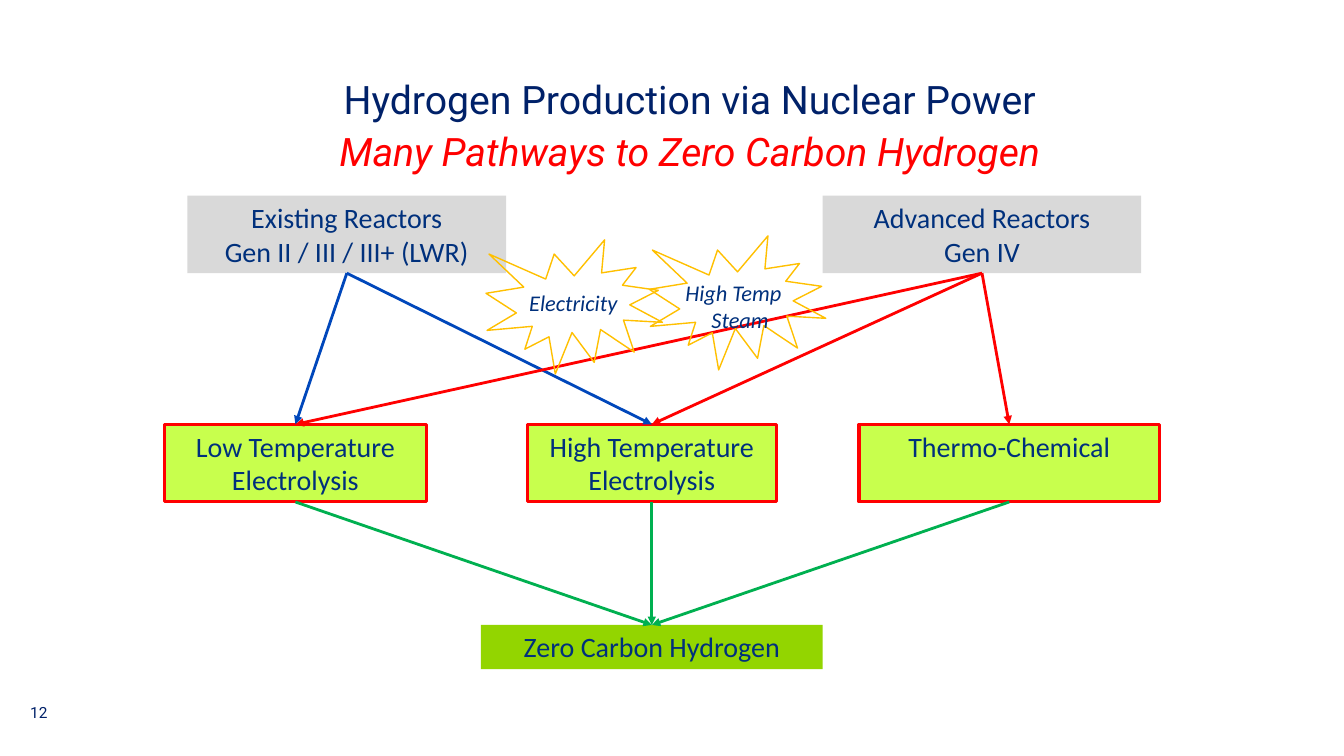
from dataclasses import dataclass

from lxml.etree import SubElement
from pptx import Presentation
from pptx.dml.color import RGBColor
from pptx.enum.shapes import MSO_CONNECTOR, MSO_SHAPE
from pptx.enum.text import MSO_ANCHOR, PP_ALIGN
from pptx.oxml.ns import qn
from pptx.shapes.autoshape import Shape
from pptx.slide import Slide
from pptx.text.text import Font
from pptx.util import Inches, Pt

NAVY = RGBColor(0x00, 0x21, 0x69)
TEXT_BLUE = RGBColor(0x00, 0x30, 0x7C)
ARROW_BLUE = RGBColor(0x00, 0x47, 0xBB)
RED = RGBColor(0xFF, 0x00, 0x00)
ARROW_GREEN = RGBColor(0x00, 0xB0, 0x50)
LIME = RGBColor(0xC8, 0xFF, 0x4D)
LEAF = RGBColor(0x93, 0xD5, 0x00)
GREY = RGBColor(0xD9, 0xD9, 0xD9)
AMBER = RGBColor(0xFF, 0xC0, 0x00)

BOX_HEIGHT = 0.77
REACTOR_TOP = 1.94
PROCESS_TOP = 4.21
TOP_SITE, BOTTOM_SITE = 0, 2


@dataclass
class Box:
    name: str
    text: str
    left: float
    top: float
    width: float
    fill: RGBColor
    outline: RGBColor | None = None
    height: float = BOX_HEIGHT


@dataclass
class Flow:
    source: str
    targets: list[str]
    color: RGBColor


@dataclass
class Burst:
    text: str
    left: float
    top: float
    label_left: float
    label_top: float
    label_height: float


BOXES = [
    Box("low", "Low Temperature Electrolysis", 1.63, PROCESS_TOP, 2.6, LIME, RED),
    Box("high", "High Temperature Electrolysis", 5.23, PROCESS_TOP, 2.47, LIME, RED),
    Box("thermo", "Thermo-Chemical", 8.52, PROCESS_TOP, 2.98, LIME, RED),
    Box("hydrogen", "Zero Carbon Hydrogen", 4.77, 6.2, 3.39, LEAF, height=0.44),
    Box("existing", "Existing Reactors\nGen II / III / III+ (LWR)", 1.86, REACTOR_TOP, 3.16, GREY),
    Box("advanced", "Advanced Reactors\nGen IV", 8.16, REACTOR_TOP, 3.16, GREY),
]
FLOWS = [
    Flow("existing", ["low", "high"], ARROW_BLUE),
    Flow("advanced", ["low", "high", "thermo"], RED),
    Flow("low", ["hydrogen"], ARROW_GREEN),
    Flow("high", ["hydrogen"], ARROW_GREEN),
    Flow("thermo", ["hydrogen"], ARROW_GREEN),
]
BURSTS = [
    Burst("Electricity", 4.82, 2.38, 5.15, 2.82, 0.37),
    Burst("High Temp\nSteam", 6.44, 2.34, 6.7, 2.72, 0.64),
]


def style_font(font: Font, name: str, size: float, color: RGBColor, italic: bool = False) -> None:
    font.name = name
    font.size = Pt(size)
    font.color.rgb = color
    font.italic = italic


def add_text(slide: Slide, text: str, left: float, top: float, width: float, height: float) -> Shape:
    shape = slide.shapes.add_textbox(Inches(left), Inches(top), Inches(width), Inches(height))
    shape.text_frame.word_wrap = True
    shape.text_frame.text = text
    return shape


def add_title(slide: Slide) -> None:
    text = "Hydrogen Production via Nuclear Power\vMany Pathways to Zero Carbon Hydrogen"
    frame = add_text(slide, text, 2.19, 0.7, 9.3, 0.85).text_frame
    frame.margin_left = frame.margin_top = frame.margin_right = frame.margin_bottom = 0
    paragraph = frame.paragraphs[0]
    paragraph.alignment = PP_ALIGN.CENTER
    paragraph.line_spacing = 1.1
    heading, subheading = paragraph.runs
    style_font(heading.font, "Roboto", 28, NAVY)
    style_font(subheading.font, "Roboto", 28, RED, italic=True)


def add_page_number(slide: Slide) -> None:
    frame = add_text(slide, "12", 0.3, 6.93, 0.48, 0.4).text_frame
    frame.margin_left = frame.margin_right = 0
    style_font(frame.paragraphs[0].runs[0].font, "Roboto", 11, NAVY)


def add_box(slide: Slide, box: Box) -> Shape:
    shape = slide.shapes.add_shape(
        MSO_SHAPE.RECTANGLE, Inches(box.left), Inches(box.top), Inches(box.width), Inches(box.height)
    )
    shape.shadow.inherit = False
    shape.fill.solid()
    shape.fill.fore_color.rgb = box.fill
    if box.outline is None:
        shape.line.fill.background()
    else:
        shape.line.color.rgb = box.outline
        shape.line.width = Pt(2.25)
    frame = shape.text_frame
    frame.word_wrap = True
    frame.vertical_anchor = MSO_ANCHOR.TOP
    frame.text = box.text
    for paragraph in frame.paragraphs:
        paragraph.alignment = PP_ALIGN.CENTER
        style_font(paragraph.runs[0].font, "Calibri", 20, TEXT_BLUE)
    return shape


def add_arrow(slide: Slide, source: Shape, target: Shape, color: RGBColor) -> None:
    connector = slide.shapes.add_connector(MSO_CONNECTOR.STRAIGHT, 0, 0, 0, 0)
    connector.begin_connect(source, BOTTOM_SITE)
    connector.end_connect(target, TOP_SITE)
    connector.line.color.rgb = color
    connector.line.width = Pt(2)
    SubElement(connector.line._get_or_add_ln(), qn("a:tailEnd"), type="triangle")
    SubElement(connector._element.spPr, qn("a:effectLst"))


def add_burst(slide: Slide, burst: Burst) -> None:
    shape = slide.shapes.add_shape(
        MSO_SHAPE.EXPLOSION1, Inches(burst.left), Inches(burst.top), Inches(1.75), Inches(1.33)
    )
    shape.shadow.inherit = False
    shape.fill.background()
    shape.line.color.rgb = AMBER
    shape.line.width = Pt(1)
    label = add_text(slide, burst.text, burst.label_left, burst.label_top, 1.28, burst.label_height)
    for index, paragraph in enumerate(label.text_frame.paragraphs):
        paragraph.alignment = PP_ALIGN.CENTER if index else PP_ALIGN.LEFT
        style_font(paragraph.runs[0].font, "Calibri", 16, TEXT_BLUE, italic=True)


def main() -> None:
    presentation = Presentation()
    presentation.slide_width = Inches(13.33)
    presentation.slide_height = Inches(7.5)
    slide = presentation.slides.add_slide(presentation.slide_layouts[6])
    add_title(slide)
    add_page_number(slide)
    shapes = {box.name: add_box(slide, box) for box in BOXES}
    for flow in FLOWS:
        for target in flow.targets:
            add_arrow(slide, shapes[flow.source], shapes[target], flow.color)
    for burst in BURSTS:
        add_burst(slide, burst)
    presentation.save("out.pptx")


if __name__ == "__main__":
    main()
